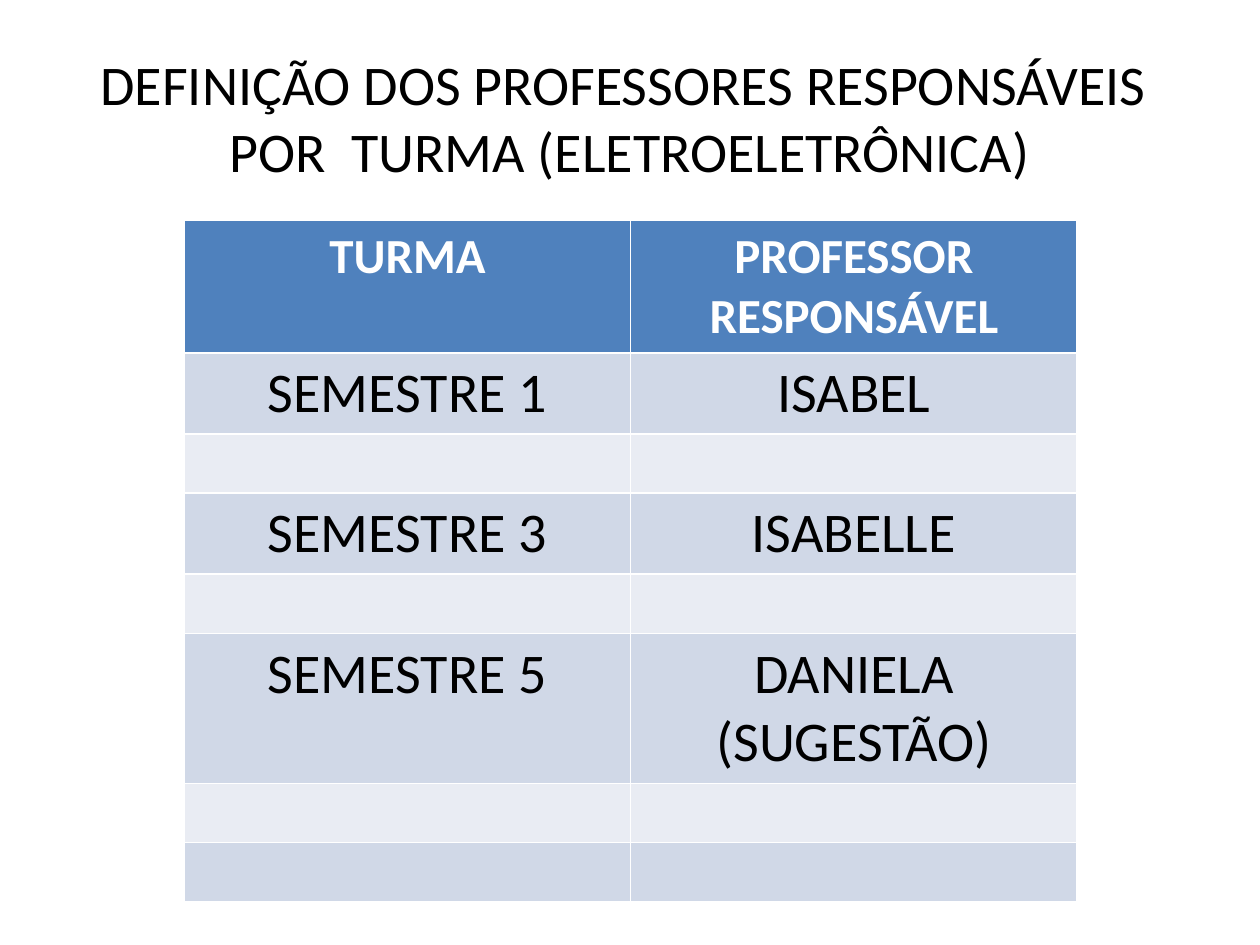
"""Build the slide listing the teacher responsible for each class."""
from pptx import Presentation
from pptx.dml.color import RGBColor
from pptx.enum.text import MSO_ANCHOR, PP_ALIGN
from pptx.util import Pt

BLACK = RGBColor(0x00, 0x00, 0x00)
WHITE = RGBColor(0xFF, 0xFF, 0xFF)
HEADER_BLUE = RGBColor(0x4F, 0x81, 0xBD)
BAND_DARK = RGBColor(0xD0, 0xD8, 0xE7)
BAND_LIGHT = RGBColor(0xE9, 0xEC, 0xF3)

HEADER_FONT = {"name": "Calibri", "size": Pt(28), "bold": True}
BODY_FONT = {"name": "Calibri", "size": Pt(32), "bold": False}


def write_centred(frame, text, font_format, color):
    frame.text = text
    paragraph = frame.paragraphs[0]
    paragraph.alignment = PP_ALIGN.CENTER
    font = paragraph.runs[0].font
    for attribute, value in font_format.items():
        setattr(font, attribute, value)
    font.color.rgb = color


deck = Presentation()
deck.slide_width, deck.slide_height = Pt(720), Pt(540)
slide = deck.slides.add_slide(deck.slide_layouts[5])

heading = slide.shapes.title
placement = {"left": Pt(36), "top": Pt(21.6), "width": Pt(648), "height": Pt(90)}
for attribute, value in placement.items():
    setattr(heading, attribute, value)
heading.text_frame.vertical_anchor = MSO_ANCHOR.MIDDLE
write_centred(
    heading.text_frame,
    "DEFINIÇÃO DOS PROFESSORES RESPONSÁVEIS  POR  TURMA (ELETROELETRÔNICA)",
    BODY_FONT,
    BLACK,
)

assignments = [
    (75.6, "TURMA", "PROFESSOR RESPONSÁVEL"),
    (46.1, "SEMESTRE 1", "ISABEL"),
    (33.8, "", ""),
    (46.1, "SEMESTRE 3", "ISABELLE"),
    (33.8, "", ""),
    (85.7, "SEMESTRE 5", "DANIELA (SUGESTÃO)"),
    (33.8, "", ""),
    (33.8, "", ""),
]
total_height = sum(height for height, *_ in assignments)
schedule = slide.shapes.add_table(
    len(assignments), 2, Pt(105.2), Pt(126), Pt(510.4), Pt(total_height)
).table

for row_number, (height, *entries) in enumerate(assignments):
    schedule.rows[row_number].height = Pt(height)
    if row_number == 0:
        fill_color, font_format, text_color = HEADER_BLUE, HEADER_FONT, WHITE
    else:
        fill_color = BAND_DARK if row_number % 2 else BAND_LIGHT
        font_format, text_color = BODY_FONT, BLACK
    for column_number, entry in enumerate(entries):
        cell = schedule.cell(row_number, column_number)
        cell.fill.solid()
        cell.fill.fore_color.rgb = fill_color
        if entry:
            write_centred(cell.text_frame, entry, font_format, text_color)

deck.save("out.pptx")
